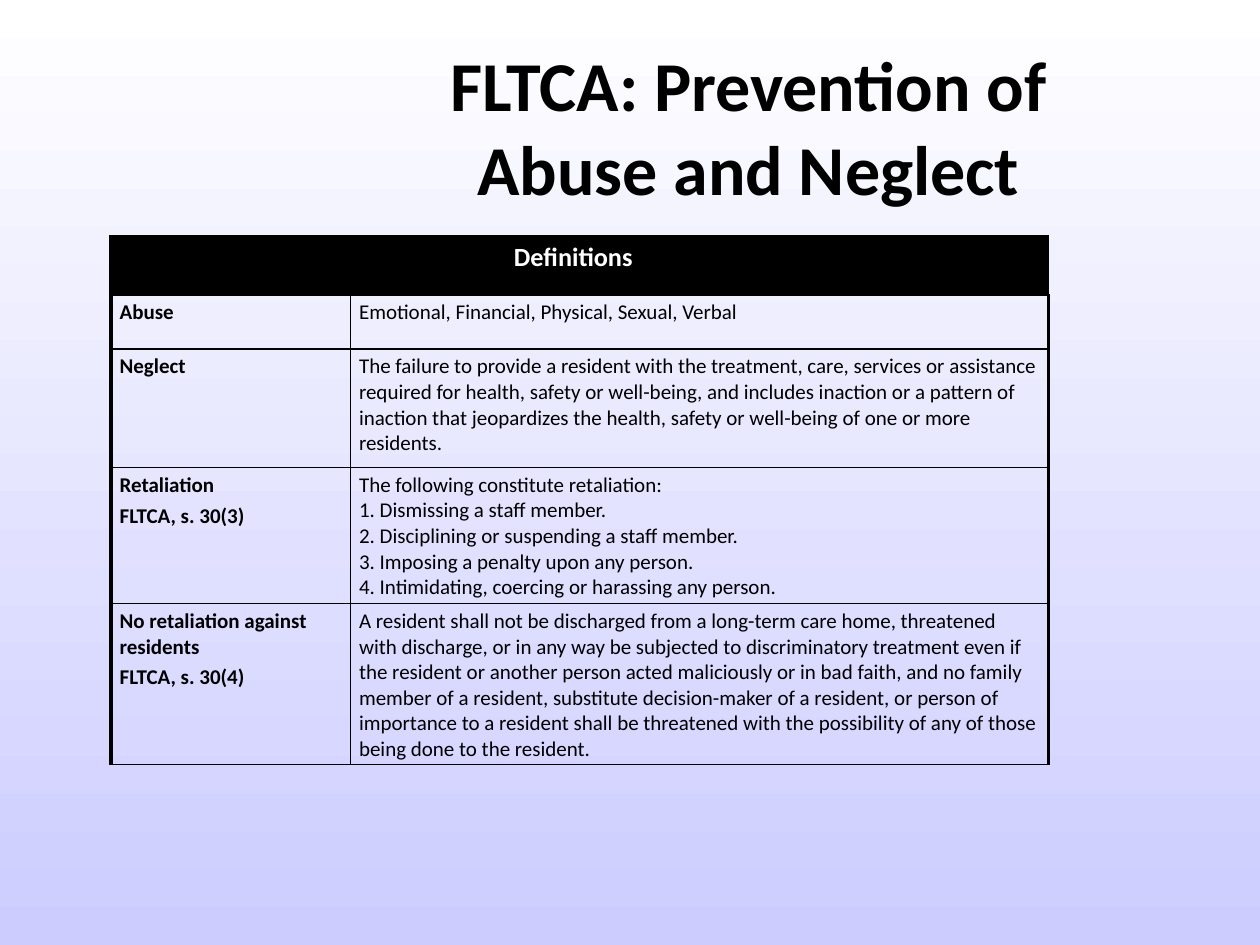
from lxml.etree import SubElement
from pptx import Presentation
from pptx.dml.color import RGBColor
from pptx.enum.text import PP_ALIGN as Align
from pptx.oxml.ns import qn
from pptx.util import Inches, Pt

BLACK, WHITE, LAVENDER = "000000", "FFFFFF", "CCCCFF"
COLUMNS = (1.9, 5.54)
ROWS = (0.46, 0.43, 0.94, 1.07, 1.27)
DEFINITIONS = [
    (["Abuse"], ["Emotional, Financial, Physical, Sexual, Verbal"]),
    (["Neglect"],
     ["The failure to provide a resident with the treatment, care, services or assistance "
      "required for health, safety or well-being, and includes inaction or a pattern of "
      "inaction that jeopardizes the health, safety or well-being of one or more residents."]),
    (["Retaliation", "FLTCA, s. 30(3)"],
     ["The following constitute retaliation:",
      "1. Dismissing a staff member.",
      "2. Disciplining or suspending a staff member.",
      "3. Imposing a penalty upon any person.",
      "4. Intimidating, coercing or harassing any person."]),
    (["No retaliation against residents", "FLTCA, s. 30(4)"],
     ["A resident shall not be discharged from a long-term care home, threatened with "
      "discharge, or in any way be subjected to discriminatory treatment even if the resident "
      "or another person acted maliciously or in bad faith, and no family member of a resident, "
      "substitute decision-maker of a resident, or person of importance to a resident shall be "
      "threatened with the possibility of any of those being done to the resident."]),
]


def color(value):
    """Turn a hex string into a colour."""
    return RGBColor.from_string(value)


def write(tf, lines, size, ink=BLACK, bold=False, align=Align.LEFT, after=0):
    """Fill a text frame with one paragraph per line."""
    tf.word_wrap = True
    for i, line in enumerate(lines):
        p = tf.paragraphs[0] if i == 0 else tf.add_paragraph()
        p.text, p.alignment, p.space_after = line, align, Pt(after)
        p.font.name, p.font.size, p.font.bold = "Calibri", Pt(size), bold
        p.font.color.rgb = color(ink)


def set_borders(cell, widths):
    """Draw the left, right, top and bottom borders ahead of the cell fill."""
    props = cell._tc.get_or_add_tcPr()
    for i, (side, width) in enumerate(zip("LRTB", widths)):
        ln = SubElement(props, qn(f"a:ln{side}"), w=str(Pt(width)))
        fill = SubElement(ln, qn("a:solidFill"))
        SubElement(fill, qn("a:srgbClr"), val=BLACK)
        props.insert(i, ln)


def add_background(s):
    """Shade the slide from white down to lavender."""
    fill = s.background.fill
    fill.gradient()
    fill.gradient_angle = 270
    for stop, value, place in zip(fill.gradient_stops, (WHITE, LAVENDER), (0, 1)):
        stop.color.rgb, stop.position = color(value), place


def add_title(s, box):
    """Place the centred slide title in the box."""
    sp = s.shapes.add_textbox(*map(Inches, box))
    write(sp.text_frame, ["FLTCA: Prevention of Abuse and Neglect"], 40,
          bold=True, align=Align.CENTER)


def add_definitions(s, left, top):
    """Place the definitions table with its merged heading row."""
    frame = s.shapes.add_table(len(ROWS), len(COLUMNS), Inches(left), Inches(top),
                               Inches(sum(COLUMNS)), Inches(sum(ROWS)))
    table = frame.table
    table.horz_banding = False
    for column, width in zip(table.columns, COLUMNS):
        column.width = Inches(width)
    for r, height in enumerate(ROWS):
        table.rows[r].height = Inches(height)
        for c in range(len(COLUMNS)):
            cell = table.cell(r, c)
            cell.margin_left = cell.margin_right = Inches(0.07)
            cell.margin_top = cell.margin_bottom = Inches(0.04)
            cell.fill.background()
            set_borders(cell, (1 if c else 2.25, 2.25 if c else 1, 1 if r else 2.25, 1))
            if r:
                label = c == 0
                write(cell.text_frame, DEFINITIONS[r - 1][c], 12,
                      bold=label, after=3 if label else 0)
    heading = table.cell(0, 0)
    heading.merge(table.cell(0, 1))
    heading.margin_right = Inches(0.17)
    heading.fill.solid()
    heading.fill.fore_color.rgb = color(BLACK)
    write(heading.text_frame, ["Definitions"], 15, WHITE, True, Align.CENTER, 4)


def main():
    """Build the slide and save it."""
    prs = Presentation()
    prs.slide_width, prs.slide_height = Inches(10), Inches(7.5)
    s = prs.slides.add_slide(prs.slide_layouts[6])
    add_background(s)
    add_title(s, (2.87, 0.28, 6.14, 1.45))
    add_definitions(s, 0.88, 1.88)
    prs.save("out.pptx")


if __name__ == "__main__":
    main()
